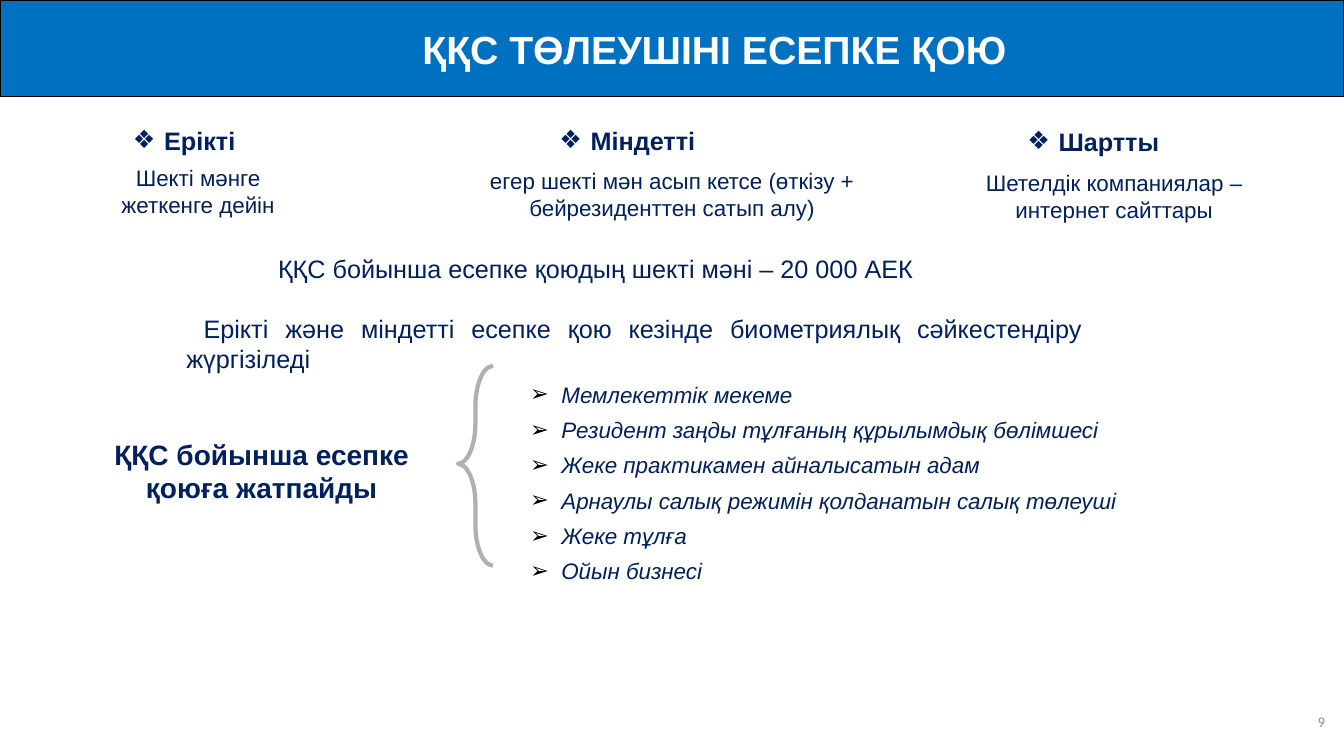
"""Build the slide on registering VAT payers."""
from dataclasses import dataclass

from lxml.etree import SubElement
from pptx import Presentation
from pptx.dml.color import RGBColor
from pptx.enum.shapes import MSO_SHAPE as Shape
from pptx.enum.text import MSO_ANCHOR as Anchor, PP_ALIGN as Align
from pptx.oxml.ns import qn
from pptx.slide import Slide
from pptx.text.text import _Paragraph as Paragraph
from pptx.util import Inches, Pt

BLUE = RGBColor(0x00, 0x70, 0xC0)
NAVY = RGBColor(0x00, 0x20, 0x60)
GRAY = RGBColor(0x8C, 0x8C, 0x8C)
BRACE_GRAY = RGBColor(0x7C, 0x7C, 0x7C)
BLACK = RGBColor(0x00, 0x00, 0x00)
WHITE = RGBColor(0xFF, 0xFF, 0xFF)
BULLET_INDENT = 0.31


@dataclass
class TextBlock:
    left: float
    top: float
    width: float
    height: float
    lines: list[str]
    size: float = 18
    align: Align = Align.LEFT
    bold: bool = False
    italic: bool = False
    color: RGBColor = NAVY
    font: str = "Arial"
    bullet: str = ""
    bullet_color: RGBColor = NAVY
    first_indent: float = 0
    space_before: float = 0
    wrap: bool = True
    anchor: Anchor = Anchor.TOP


@dataclass
class Registration:
    heading: TextBlock
    condition: TextBlock


def heading(left: float, top: float, width: float, text: str) -> TextBlock:
    return TextBlock(left, top, width, 0.4, [text], bold=True, bullet="❖", wrap=False)


def condition(left: float, top: float, width: float, text: str) -> TextBlock:
    return TextBlock(left, top, width, 0.64, [text], size=16, align=Align.CENTER)


REGISTRATIONS = [
    Registration(heading(1.22, 1.19, 1.29, "Ерікті"),
                 condition(0.83, 1.58, 2.27, "Шекті мәнге жеткенге дейін")),
    Registration(heading(5.45, 1.19, 1.68, "Міндетті"),
                 condition(4.22, 1.61, 4.89,
                           "егер шекті мән асып кетсе (өткізу + бейрезиденттен сатып алу)")),
    Registration(heading(10.09, 1.2, 1.71, "Шартты"),
                 condition(9.26, 1.63, 3.58, "Шетелдік компаниялар – интернет сайттары")),
]

THRESHOLD = TextBlock(2.66, 2.46, 7.25, 0.4,
                      ["ҚҚС бойынша есепке қоюдың шекті мәні – 20 000 АЕК"])
BIOMETRICS = TextBlock(
    1.75, 3.06, 9.08, 0.71,
    ["Ерікті және міндетті есепке қою кезінде биометриялық сәйкестендіру жүргізіледі"],
    align=Align.JUSTIFY, first_indent=0.17)
EXEMPT_TITLE = TextBlock(0.65, 4.29, 3.89, 0.77, ["ҚҚС бойынша есепке қоюға жатпайды"],
                         size=20, align=Align.CENTER, bold=True)
EXEMPT_LIST = TextBlock(
    5.16, 3.73, 7.55, 2.14,
    ["Мемлекеттік мекеме",
     "Резидент заңды тұлғаның құрылымдық бөлімшесі",
     "Жеке практикамен айналысатын адам",
     "Арнаулы салық режимін қолданатын салық төлеуші",
     "Жеке тұлға",
     "Ойын бизнесі"],
    size=16, italic=True, bullet="➢", bullet_color=BLACK, space_before=6)
PAGE_NUMBER = TextBlock(11.99, 6.79, 1.25, 0.73, ["9"], size=10.5, align=Align.RIGHT,
                        color=GRAY, font="Calibri", anchor=Anchor.MIDDLE)


def set_indent(paragraph: Paragraph, left: float, first: float) -> None:
    properties = paragraph._p.get_or_add_pPr()
    properties.set("marL", str(Inches(left)))
    properties.set("indent", str(Inches(first)))


def add_bullet(paragraph: Paragraph, character: str, color: RGBColor) -> None:
    set_indent(paragraph, BULLET_INDENT, -BULLET_INDENT)
    properties = paragraph._p.get_or_add_pPr()
    bullet_color = SubElement(properties, qn("a:buClr"))
    SubElement(bullet_color, qn("a:srgbClr"), val=str(color))
    SubElement(properties, qn("a:buFont"), typeface="Arial")
    SubElement(properties, qn("a:buChar"), char=character)


def set_font(paragraph: Paragraph, name: str, size: float, color: RGBColor,
             bold: bool, italic: bool = False) -> None:
    font = paragraph.font
    font.name, font.size = name, Pt(size)
    font.bold, font.italic = bold, italic
    font.color.rgb = color


def add_text(slide: Slide, block: TextBlock) -> None:
    box = slide.shapes.add_textbox(Inches(block.left), Inches(block.top),
                                   Inches(block.width), Inches(block.height))
    frame = box.text_frame
    frame.word_wrap = block.wrap
    frame.vertical_anchor = block.anchor
    frame.text = "\n".join(block.lines)
    for index, paragraph in enumerate(frame.paragraphs):
        if block.bullet:
            add_bullet(paragraph, block.bullet, block.bullet_color)
        elif block.first_indent:
            set_indent(paragraph, 0, block.first_indent)
        paragraph.alignment = block.align
        if index and block.space_before:
            paragraph.space_before = Pt(block.space_before)
        set_font(paragraph, block.font, block.size, block.color, block.bold, block.italic)


def add_title(slide: Slide, text: str) -> None:
    banner = slide.shapes.add_shape(Shape.RECTANGLE, 0, 0, Inches(13.33), Inches(0.96))
    banner.shadow.inherit = False
    banner.fill.solid()
    banner.fill.fore_color.rgb = BLUE
    banner.line.color.rgb = BLACK
    banner.line.width = Pt(1)
    frame = banner.text_frame
    frame.word_wrap = True
    frame.vertical_anchor = Anchor.MIDDLE
    frame.text = text
    paragraph = frame.paragraphs[0]
    set_indent(paragraph, 0.84, 0)
    paragraph.alignment = Align.CENTER
    set_font(paragraph, "Arial", 28, WHITE, bold=True)


def add_brace(slide: Slide) -> None:
    brace = slide.shapes.add_shape(Shape.RIGHT_BRACE, Inches(4.54), Inches(3.63),
                                   Inches(0.35), Inches(1.98))
    brace.rotation = 180
    brace.adjustments[0] = 1.14
    brace.adjustments[1] = 0.51
    brace.shadow.inherit = False
    brace.fill.background()
    brace.line.color.rgb = BRACE_GRAY
    brace.line.width = Pt(3)
    for color in brace.line._ln.iter(qn("a:srgbClr")):
        SubElement(color, qn("a:alpha"), val="60000")


def main() -> None:
    presentation = Presentation()
    presentation.slide_width, presentation.slide_height = Inches(13.33), Inches(7.5)
    slide = presentation.slides.add_slide(presentation.slide_layouts[6])
    add_title(slide, "ҚҚС ТӨЛЕУШІНІ ЕСЕПКЕ ҚОЮ")
    for registration in REGISTRATIONS:
        add_text(slide, registration.heading)
        add_text(slide, registration.condition)
    for block in (THRESHOLD, BIOMETRICS, EXEMPT_TITLE, EXEMPT_LIST, PAGE_NUMBER):
        add_text(slide, block)
    add_brace(slide)
    presentation.save("out.pptx")


if __name__ == "__main__":
    main()
